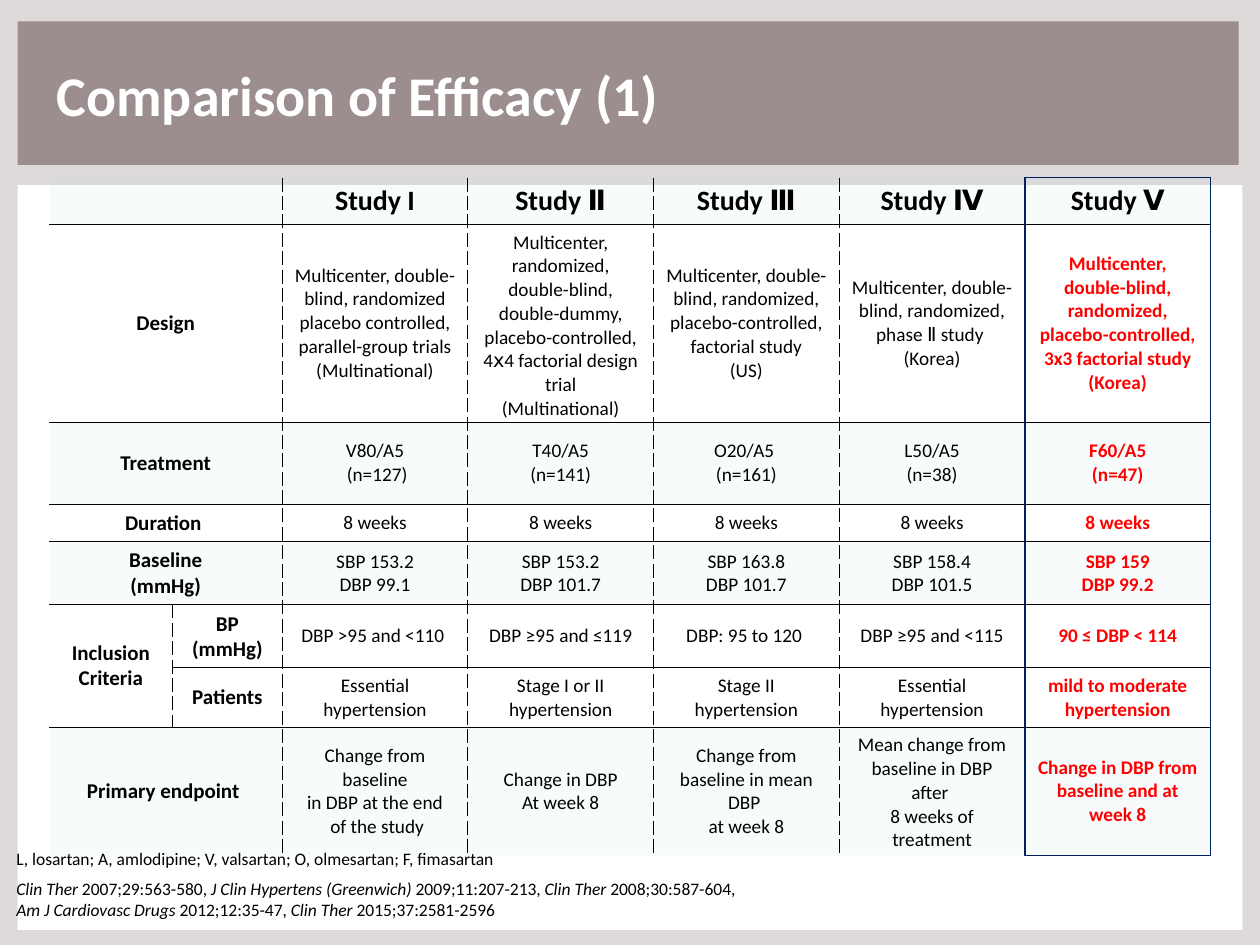
from typing import NamedTuple

from lxml import etree
from pptx import Presentation
from pptx import util as u
from pptx.dml.color import RGBColor
from pptx.enum import shapes, text
from pptx.oxml import ns

FONT = "Calibri"
BLACK, WHITE, RED, NAVY = "000000", "FFFFFF", "FF0000", "002060"
TINT, BAND, BACKDROP = "B7DEE8", "9C8E8E", "DEDADA"


class Box(NamedTuple):
    left: float
    top: float
    width: float
    height: float

    def emu(self) -> list:
        return [u.Inches(length) for length in self]


class Edge(NamedTuple):
    color: str
    points: float
    dash: str = "solid"


class Row(NamedTuple):
    height: float
    tinted: bool
    labels: tuple  # one label spans both label columns
    studies: tuple


DASHED = Edge(BLACK, 0.5, "dash")
RULE = Edge(BLACK, 0.5)
FRAME = Edge(NAVY, 1)

ROWS = [
    Row(0.37, True, ("",), ("Study I", "Study Ⅱ", "Study Ⅲ", "Study Ⅳ", "Study Ⅴ")),
    Row(1.57, False, ("Design",), (
        "Multicenter, double-blind, randomized placebo controlled,\n"
        "parallel-group trials\n(Multinational)",
        "Multicenter, randomized, double-blind, double-dummy, placebo-controlled, "
        "4ⅹ4 factorial design trial\n(Multinational)",
        "Multicenter, double-blind, randomized, placebo-controlled, factorial study\n(US)",
        "Multicenter, double-blind, randomized, phase Ⅱ study \n(Korea)",
        "Multicenter, double-blind, randomized, placebo-controlled, "
        "3x3 factorial study\n(Korea)")),
    Row(0.65, True, ("Treatment",), (
        "V80/A5\n (n=127)", "T40/A5\n(n=141)", "O20/A5 \n(n=161)",
        "L50/A5\n(n=38)", "F60/A5\n(n=47)")),
    Row(0.3, False, ("Duration ",), ("8 weeks",) * 5),
    Row(0.5, True, ("Baseline\n(mmHg)",), (
        "SBP 153.2\nDBP 99.1", "SBP 153.2\nDBP 101.7", "SBP 163.8\nDBP 101.7",
        "SBP 158.4\nDBP 101.5", "SBP 159\nDBP 99.2")),
    Row(0.5, False, ("Inclusion Criteria", "BP\n(mmHg)"), (
        "DBP >95 and <110 ", "DBP ≥95 and ≤119", "DBP: 95 to 120 ",
        "DBP ≥95 and <115", "90 ≤ DBP < 114")),
    Row(0.47, False, ("", "Patients"), (
        "Essential hypertension", "Stage I or II hypertension",
        "Stage II hypertension", "Essential hypertension",
        "mild to moderate hypertension")),
    Row(1.02, True, ("Primary endpoint ",), (
        "Change from baseline\nin DBP at the end\n of the study",
        "Change in DBP\nAt week 8",
        "Change from baseline in mean DBP \nat week 8",
        "Mean change from baseline in DBP after \n8 weeks of treatment",
        "Change in DBP from baseline and at week 8")),
]
GRID = Box(0.39, 1.41, 9.22, sum(row.height for row in ROWS))
LABEL_COLUMNS = [0.98, 0.87]
STUDY_COUNT = 5
COLUMNS = LABEL_COLUMNS + [(GRID.width - sum(LABEL_COLUMNS)) / STUDY_COUNT] * STUDY_COUNT
LAST_ROW, LAST_COLUMN = len(ROWS) - 1, len(COLUMNS) - 1

CITATIONS = [  # (words, italic)
    [("Clin Ther ", True), ("2007;29:563-580, ", False),
     ("J Clin Hypertens (Greenwich) ", True), ("2009;11:207-213,", False),
     (" Clin Ther ", True), ("2008;30:587-604,", False)],
    [("Am J Cardiovasc Drugs ", True), ("2012;12:35-47, ", False),
     ("Clin Ther ", True), ("2015;37:2581-2596", False)],
]
ABBREVIATIONS = [[("L, losartan; A, amlodipine; V, valsartan; O, olmesartan; F, fimasartan", False)]]


def rgb(color: str) -> RGBColor:
    return RGBColor.from_string(color)


def add_run(paragraph, words: str, size: float, color=BLACK, bold=False, italic=False) -> None:
    run = paragraph.add_run()
    run.text = words
    font = run.font
    font.name, font.size, font.bold, font.italic = FONT, u.Pt(size), bold, italic
    font.color.rgb = rgb(color)


def paragraph_at(frame, index: int):
    return frame.add_paragraph() if index else frame.paragraphs[0]


def add_panel(slide, box: Box, color: str) -> None:
    panel = slide.shapes.add_shape(shapes.MSO_SHAPE.RECTANGLE, *box.emu())
    panel.shadow.inherit = False
    panel.fill.solid()
    panel.fill.fore_color.rgb = rgb(color)
    panel.line.fill.background()


def add_note(slide, box: Box, lines: list) -> None:
    frame = slide.shapes.add_textbox(*box.emu()).text_frame
    frame.word_wrap = True
    frame.margin_left = frame.margin_right = frame.margin_top = frame.margin_bottom = 0
    for index, line in enumerate(lines):
        paragraph = paragraph_at(frame, index)
        for words, italic in line:
            add_run(paragraph, words, 10, italic=italic)


def add_solid(parent, color: str, opacity: int = 100) -> None:
    solid = etree.SubElement(parent, ns.qn("a:solidFill"))
    tone = etree.SubElement(solid, ns.qn("a:srgbClr"), val=color)
    etree.SubElement(tone, ns.qn("a:alpha"), val=str(opacity * 1000))


def cell_edges(row: int, column: int) -> dict:
    """The last study is framed; the table's other outer sides stay open."""
    framed = column == LAST_COLUMN
    outer = FRAME if framed else None
    return {
        "L": FRAME if framed else DASHED if column else None,
        "R": FRAME if column >= LAST_COLUMN - 1 else DASHED,
        "T": RULE if row else outer,
        "B": RULE if row < LAST_ROW else outer,
    }


def format_cell(cell, row: int, column: int) -> None:
    properties = cell._tc.get_or_add_tcPr()
    for side, edge in cell_edges(row, column).items():
        width = u.Pt(edge.points) if edge else 0
        line = etree.SubElement(properties, ns.qn(f"a:ln{side}"), w=str(width))
        if edge:
            add_solid(line, edge.color)
            etree.SubElement(line, ns.qn("a:prstDash"), val=edge.dash)
        else:
            etree.SubElement(line, ns.qn("a:noFill"))
    add_solid(properties, TINT if ROWS[row].tinted else WHITE, 10)


def write_cell(cell, words: str, size: float, color: str, bold: bool) -> None:
    cell.vertical_anchor = text.MSO_ANCHOR.MIDDLE
    for index, line in enumerate(words.split("\n")):
        paragraph = paragraph_at(cell.text_frame, index)
        paragraph.alignment = text.PP_ALIGN.CENTER
        if line:
            add_run(paragraph, line, size, color, bold)
        else:
            etree.SubElement(paragraph._p, ns.qn("a:endParaRPr"), sz=str(size * 100))


def add_study_table(slide) -> None:
    table = slide.shapes.add_table(len(ROWS), len(COLUMNS), *GRID.emu()).table
    table.first_row = table.horz_banding = False
    style = table._tbl.tblPr.find(ns.qn("a:tableStyleId"))
    style.text = "{2D5ABB26-0587-4C30-8999-92F81FD0307C}"  # no style, no grid
    for column, width in zip(table.columns, COLUMNS):
        column.width = u.Inches(width)

    # Merge the labels
    for index, row in enumerate(ROWS):
        table.rows[index].height = u.Inches(row.height)
        if len(row.labels) == 1:
            table.cell(index, 0).merge(table.cell(index, 1))
        elif not row.labels[0]:
            table.cell(index - 1, 0).merge(table.cell(index, 0))

    # Fill the cells
    for r, row in enumerate(ROWS):
        labels = row.labels + ("",) * (len(LABEL_COLUMNS) - len(row.labels))
        for c, words in enumerate(labels + row.studies):
            cell = table.cell(r, c)
            is_label = c < len(LABEL_COLUMNS)
            highlighted = r > 0 and c == LAST_COLUMN
            size = 16 if r == 0 else 12 if is_label else 11
            write_cell(cell, words, size, RED if highlighted else BLACK,
                       r == 0 or is_label or highlighted)
            if not cell.is_spanned:
                format_cell(cell, r, c)


def place_title(slide, box: Box, words: str) -> None:
    title = slide.shapes.title
    title.left, title.top, title.width, title.height = box.emu()
    frame = title.text_frame
    frame.auto_size = text.MSO_AUTO_SIZE.NONE
    frame.word_wrap = False
    frame.vertical_anchor = text.MSO_ANCHOR.MIDDLE
    frame.paragraphs[0].alignment = text.PP_ALIGN.LEFT
    add_run(frame.paragraphs[0], words, 32, WHITE, bold=True)
    title.element.getparent().append(title.element)  # in front of the band


def main() -> None:
    deck = Presentation()
    deck.slide_width, deck.slide_height = u.Inches(10), u.Inches(7.5)
    slide = deck.slides.add_slide(deck.slide_layouts.get_by_name("Title Only"))
    slide.background.fill.solid()
    slide.background.fill.fore_color.rgb = rgb(BACKDROP)

    # Title band and content panel
    add_panel(slide, Box(0.14, 0.17, 9.69, 1.14), BAND)
    add_panel(slide, Box(0.14, 1.47, 9.72, 5.91), WHITE)

    # Sources, table and abbreviations
    add_note(slide, Box(0.13, 6.97, 5.84, 0.34), CITATIONS)
    add_study_table(slide)
    add_note(slide, Box(0.13, 6.73, 8.59, 0.17), ABBREVIATIONS)
    place_title(slide, Box(0.35, 0.43, 5.04, 0.64), "Comparison of Efficacy (1)")
    deck.save("out.pptx")


if __name__ == "__main__":
    main()
